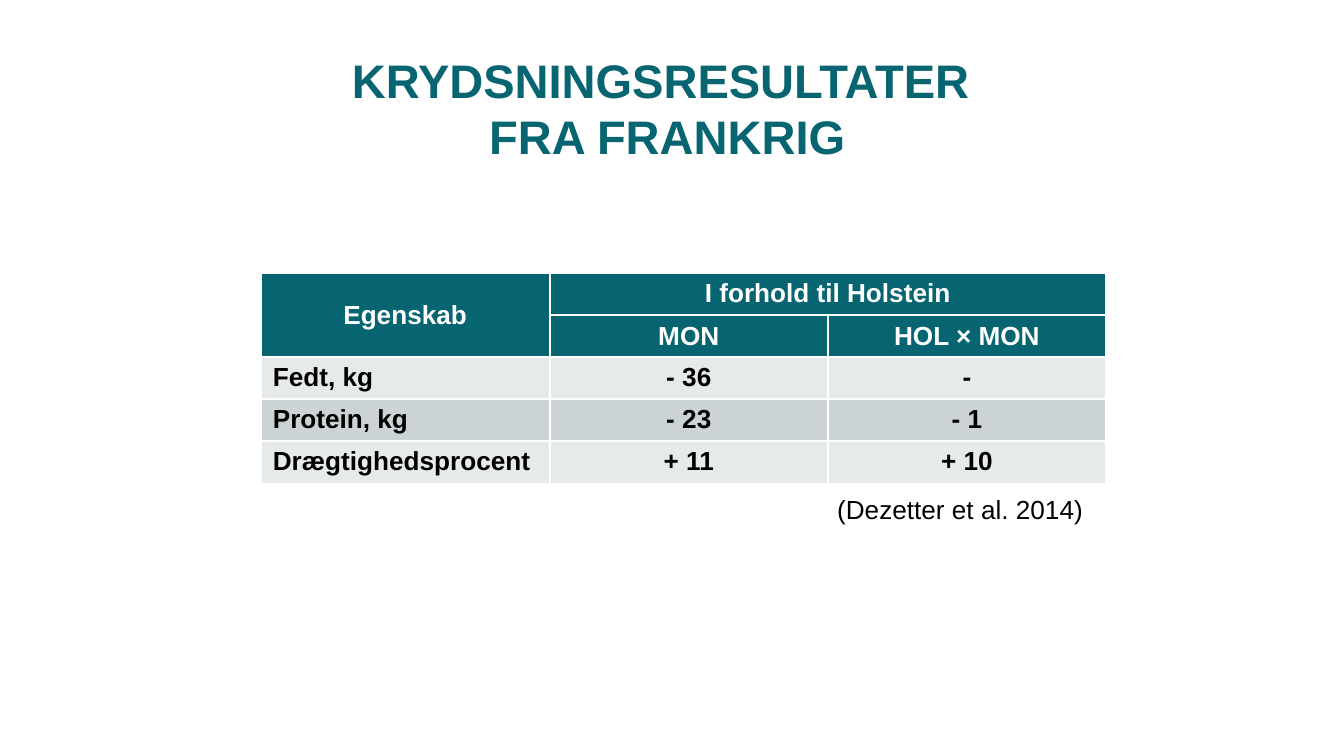
from pptx import Presentation
from pptx.dml.color import RGBColor
from pptx.enum.text import MSO_ANCHOR, PP_ALIGN
from pptx.util import Inches, Pt

COLORS = {"teal": "076471", "white": "FFFFFF", "black": "000000",
          "light": "E7EAEB", "gray": "CCD3D5"}
FONT = "Arial"
TITLE = "KRYDSNINGSRESULTATER \vFRA FRANKRIG"
SOURCE = "(Dezetter et al. 2014)"
ROWS = [
    ("Egenskab", "I forhold til Holstein", ""),
    ("", "MON", "HOL × MON"),
    ("Fedt, kg", "- 36", "-"),
    ("Protein, kg", "- 23", "- 1"),
    ("Drægtighedsprocent", "+ 11", "+ 10"),
]
HEADER_ROWS = 2
COLUMN_WIDTHS = (2.15, 2.07, 2.07)
ROW_HEIGHT = 0.3


def style_text(frame, size, color, bold, align):
    for paragraph in frame.paragraphs:
        paragraph.alignment = align
        paragraph.font.size = Pt(size)
        for span in paragraph.runs:
            span.font.name = FONT
            span.font.size = Pt(size)
            span.font.bold = bold
            span.font.color.rgb = RGBColor.from_string(COLORS[color])


def add_text(page, text, place, size, color, bold, align, anchor):
    box = page.shapes.add_textbox(*map(Inches, place))
    frame = box.text_frame
    frame.word_wrap = True
    frame.vertical_anchor = anchor
    frame.text = text
    style_text(frame, size, color, bold, align)


def add_results(page):
    frame = page.shapes.add_table(
        len(ROWS), len(COLUMN_WIDTHS), Inches(1.94), Inches(2.03),
        Inches(sum(COLUMN_WIDTHS)), Inches(ROW_HEIGHT * len(ROWS)))
    table = frame.table
    for column, width in zip(table.columns, COLUMN_WIDTHS):
        column.width = Inches(width)
    for row_index, values in enumerate(ROWS):
        table.rows[row_index].height = Inches(ROW_HEIGHT)
        header = row_index < HEADER_ROWS
        band = "gray" if row_index % 2 else "light"
        for column_index, value in enumerate(values):
            cell = table.cell(row_index, column_index)
            cell.text = value
            cell.margin_left = cell.margin_right = Inches(0.09)
            cell.margin_top = cell.margin_bottom = Inches(0.04)
            cell.vertical_anchor = MSO_ANCHOR.MIDDLE if header else MSO_ANCHOR.TOP
            centered = header or column_index > 0
            style_text(cell.text_frame, 14, "white" if header else "black", True,
                       PP_ALIGN.CENTER if centered else PP_ALIGN.LEFT)
            cell.fill.solid()
            cell.fill.fore_color.rgb = RGBColor.from_string(
                COLORS["teal" if header else band])
    table.cell(0, 0).merge(table.cell(1, 0))
    table.cell(0, 1).merge(table.cell(0, 2))


deck = Presentation()
deck.slide_width = Inches(10)
deck.slide_height = deck.slide_width * 9 // 16
page = deck.slides.add_slide(deck.slide_layouts[6])
add_text(page, TITLE, (0.43, 0.33, 9.07, 0.94), 25.2, "teal", True,
         PP_ALIGN.CENTER, MSO_ANCHOR.MIDDLE)
add_results(page)
add_text(page, SOURCE, (6.13, 3.62, 2.09, 0.64), 14, "black", False,
         PP_ALIGN.LEFT, MSO_ANCHOR.TOP)
deck.save("out.pptx")
